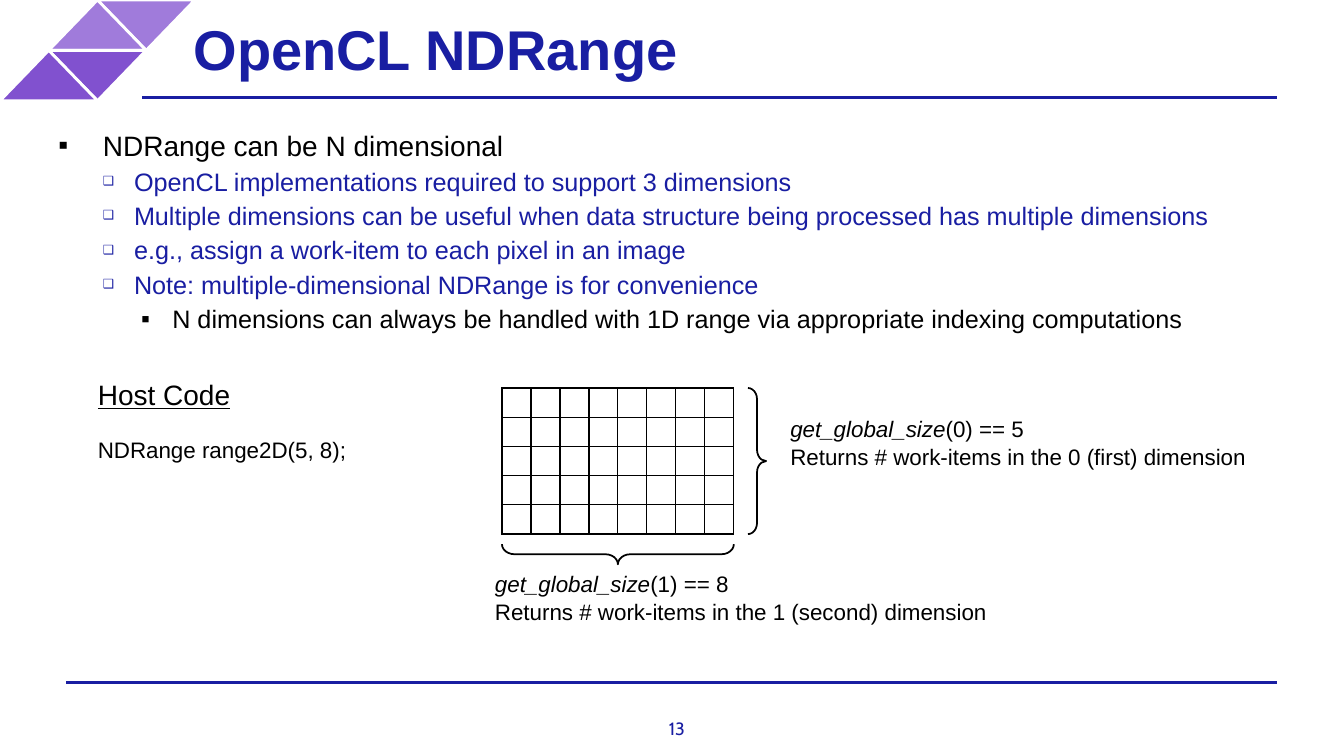
from lxml import etree
from pptx import Presentation, util as u
from pptx.dml.color import RGBColor
from pptx.enum import shapes, text
from pptx.oxml import ns

COLS, ROWS = 40, 22.5
HEX = {"navy": "191EA2", "lilac": "A07BDB", "violet": "8151CF",
       "white": "FFFFFF", "black": "000000"}
# Bullet levels: left margin and hanging indent in grid cells
LEVELS = [
    {"left": 1.5, "hang": 1.32, "mark": "▪", "scale": 100, "size": 20, "hue": "black"},
    {"left": 2.43, "hang": 0.93, "mark": "❑", "scale": 50, "size": 18, "hue": "navy"},
    {"left": 3.57, "hang": 0.93, "mark": "▪", "scale": 100, "size": 18, "hue": "black"},
]
POINTS = [
    (0, "NDRange can be N dimensional"),
    (1, "OpenCL implementations required to support 3 dimensions"),
    (1, "Multiple dimensions can be useful when data structure being processed has multiple dimensions"),
    (1, "e.g., assign a work-item to each pixel in an image"),
    (1, "Note: multiple-dimensional NDRange is for convenience"),
    (2, "N dimensions can always be handled with 1D range via appropriate indexing computations"),
]

deck = Presentation()
deck.slide_width, deck.slide_height = u.Inches(13.33), u.Inches(7.5)
slide = deck.slides.add_slide(deck.slide_layouts[6])


def cell(*vals):
    """Turn grid cells into slide lengths."""
    return [round(v * deck.slide_width / COLS) for v in vals]


def rgb(hue):
    return RGBColor.from_string(HEX[hue])


def sub(node, tag, **attrs):
    return etree.SubElement(node, ns.qn(tag), attrs)


def style(font, hue="black", **form):
    font.color.rgb = rgb(hue)
    for key, val in ({"name": "Arial"} | form).items():
        setattr(font, key, val)


def frame(box, inset=0.0, side=None):
    tf = slide.shapes.add_textbox(*cell(*box)).text_frame
    tf.word_wrap = True
    tf.margin_top = tf.margin_bottom = cell(inset)[0]
    tf.margin_left = tf.margin_right = cell(inset if side is None else side)[0]
    return tf


def rule(left, right, y):
    line = slide.shapes.add_connector(shapes.MSO_CONNECTOR.STRAIGHT, *cell(left, y, right, y))
    line.line.color.rgb, line.line.width = rgb("navy"), u.Pt(2)
    sub(line._element.spPr, "a:effectLst")


def outline(kind, box, hue, width, turn, fill=None):
    item = slide.shapes.add_shape(kind, *cell(*box))
    item.shadow.inherit = False
    item.rotation = turn
    item.line.color.rgb, item.line.width = rgb(hue), u.Pt(width)
    if fill:
        item.fill.solid()
        item.fill.fore_color.rgb = rgb(fill)
    else:
        item.fill.background()
    return item


def brace(mid, span, depth, turn):
    """Place a brace around its centre, then turn it."""
    box = (mid[0] - depth / 2, mid[1] - span / 2, depth, span)
    item = outline(shapes.MSO_SHAPE.LEFT_BRACE, box, "black", 1.25, turn)
    item.adjustments[0], item.adjustments[1] = 0.62, 0.5


def header(x, y, w, h):
    half, tall = 1.45, h / 2
    for row, fill in enumerate(("lilac", "violet")):
        for turn, step in ((180, 1), (0, 0)):
            box = (x + half * (1 - row + step), y + tall * row, 2 * half, tall)
            outline(shapes.MSO_SHAPE.ISOSCELES_TRIANGLE, box, "white", 2, turn, fill)
    rule(x + 4.23, x + w - 1.99, y + 2.91)
    tf = frame((x + 5.34, y, 24, 2.85), 0.42)
    tf.vertical_anchor = text.MSO_ANCHOR.MIDDLE
    run = tf.paragraphs[0].add_run()
    run.text = "OpenCL NDRange"
    style(run.font, "navy", size=u.Pt(40), bold=True)


def footer(x, y, w, h):
    rule(x + 1.98, x + w - 1.99, y)
    para = frame((x + 19.86, y + 1.05, 0.57, h - 1.05)).paragraphs[0]
    para.alignment = text.PP_ALIGN.CENTER
    run = para.add_run()
    run.text = "13"
    style(run.font, "navy", name="Cabin", size=u.Pt(12.7))


def bullets(*box):
    tf = frame(box)
    for num, (deep, words) in enumerate(POINTS):
        para = tf.paragraphs[0] if num == 0 else tf.add_paragraph()
        para.level, form = deep, LEVELS[deep]
        left, hang = cell(form["left"], form["hang"])
        props = para._p.get_or_add_pPr()
        props.set("marL", str(left))
        props.set("indent", str(-hang))
        sub(props, "a:buSzPct", val=str(form["scale"] * 1000))
        sub(props, "a:buFont", typeface="Arial")
        sub(props, "a:buChar", char=form["mark"])
        if num:
            para.space_before = u.Pt(3)
        run = para.add_run()
        run.text = words
        style(run.font, form["hue"], size=u.Pt(form["size"]))


def label(box, lines, indent=1.05, size=16):
    """Write lines of (words, font values) runs."""
    tf = frame(box, 0.15, 0.3)
    for num, runs in enumerate(lines):
        para = tf.paragraphs[0] if num == 0 else tf.add_paragraph()
        para._p.get_or_add_pPr().set("indent", str(cell(indent)[0]))
        para.line_spacing = u.Pt(20)
        for words, form in runs:
            run = para.add_run()
            run.text = words
            style(run.font, size=u.Pt(size), **form)


def host(x, y, w, h):
    label((x, y, w, h), [[("Host Code", {"underline": True})]], size=20)
    label((x, y + 1.56, w, h), [[("NDRange range2D(5, 8);", {})]])


def size_note(box, dim, count, order, **form):
    label(box, [
        [("get_global_size", {"italic": True}), (f"({dim}) == {count}", {})],
        [(f"Returns # work-items in the {dim} ({order}) dimension", {})],
    ], **form)


def mesh(box, rows, cols):
    """Draw an empty ruled table."""
    frm = slide.shapes.add_table(rows, cols, *cell(*box))
    grid = frm.table
    grid.first_row = grid.horz_banding = False
    for col in grid.columns:
        col.width = cell(box[2] / cols)[0]
    for row in grid.rows:
        row.height = cell(box[3] / rows)[0]
    for item in grid.iter_cells():
        item.margin_left = item.margin_right = item.margin_top = item.margin_bottom = 0
        sub(item.text_frame.paragraphs[0]._p, "a:endParaRPr", sz="800")
        props = item._tc.get_or_add_tcPr()
        for side in "LRTB":
            edge = sub(props, f"a:ln{side}", w=str(u.Pt(1)))
            sub(sub(edge, "a:solidFill"), "a:srgbClr", val=HEX["black"])
        item.fill.background()


def range_map(x, y, w, h):
    rows, cols = 5, 8
    mesh((x, y, w, h), rows, cols)
    brace((x + w / 2, y + h + 0.6), w, 0.6, 270)
    brace((x + w + 0.69, y + h / 2), h, 0.54, 180)
    size_note((x - 1.56, y + h + 0.9, 16.9, 1.92), 1, cols, "second")
    size_note((x + w + 1.38, y + 0.63, 15.66, 1.92), 0, rows, "first", indent=0)


header(0, 0, COLS, 3)
footer(0, 20.31, COLS, ROWS - 20.31)
bullets(1.56, 3.81, 36.6, 7)
host(1.56, 11.25, 10, 1.14)
range_map(14.94, 11.55, 6.9, 4.35)
deck.save("out.pptx")
